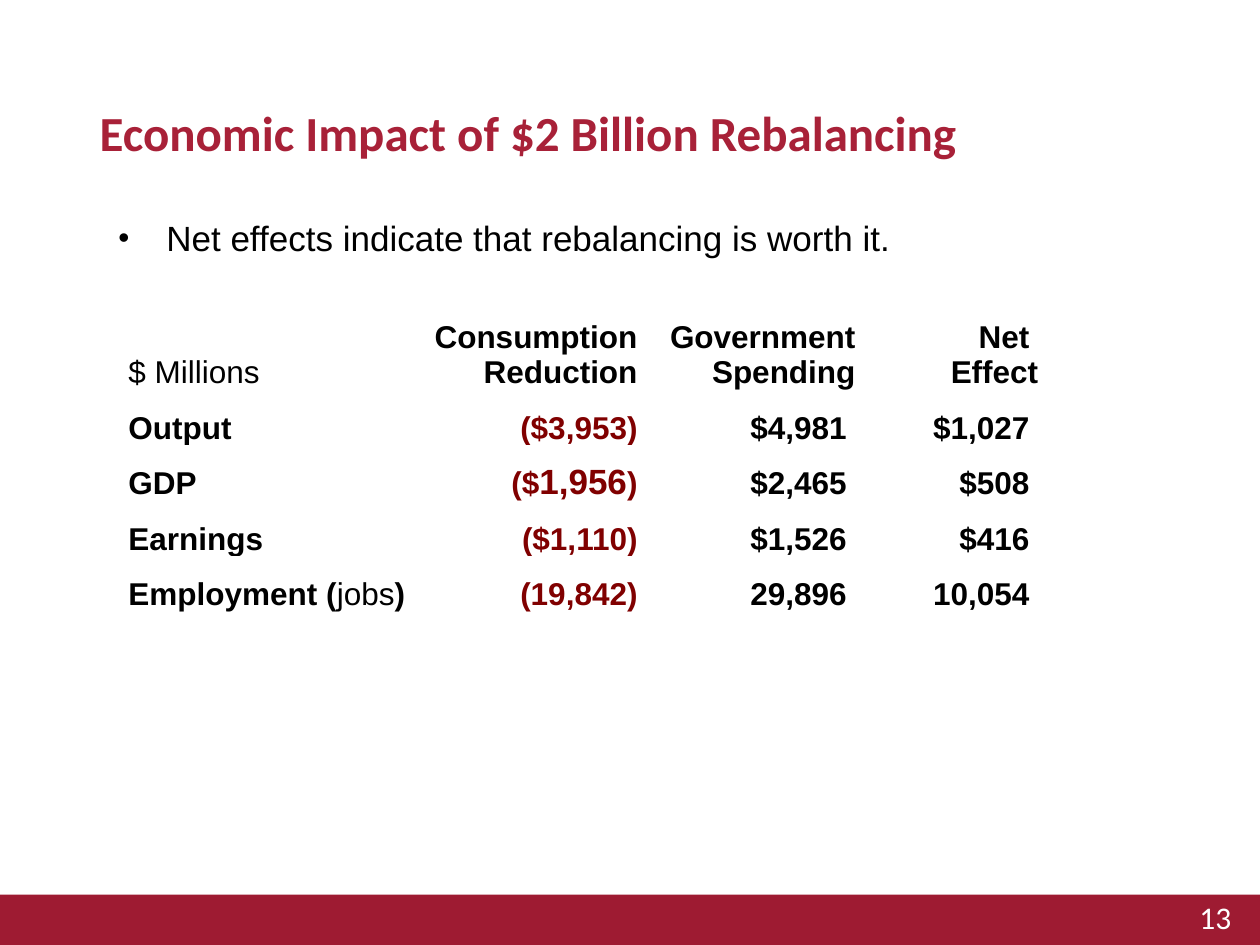
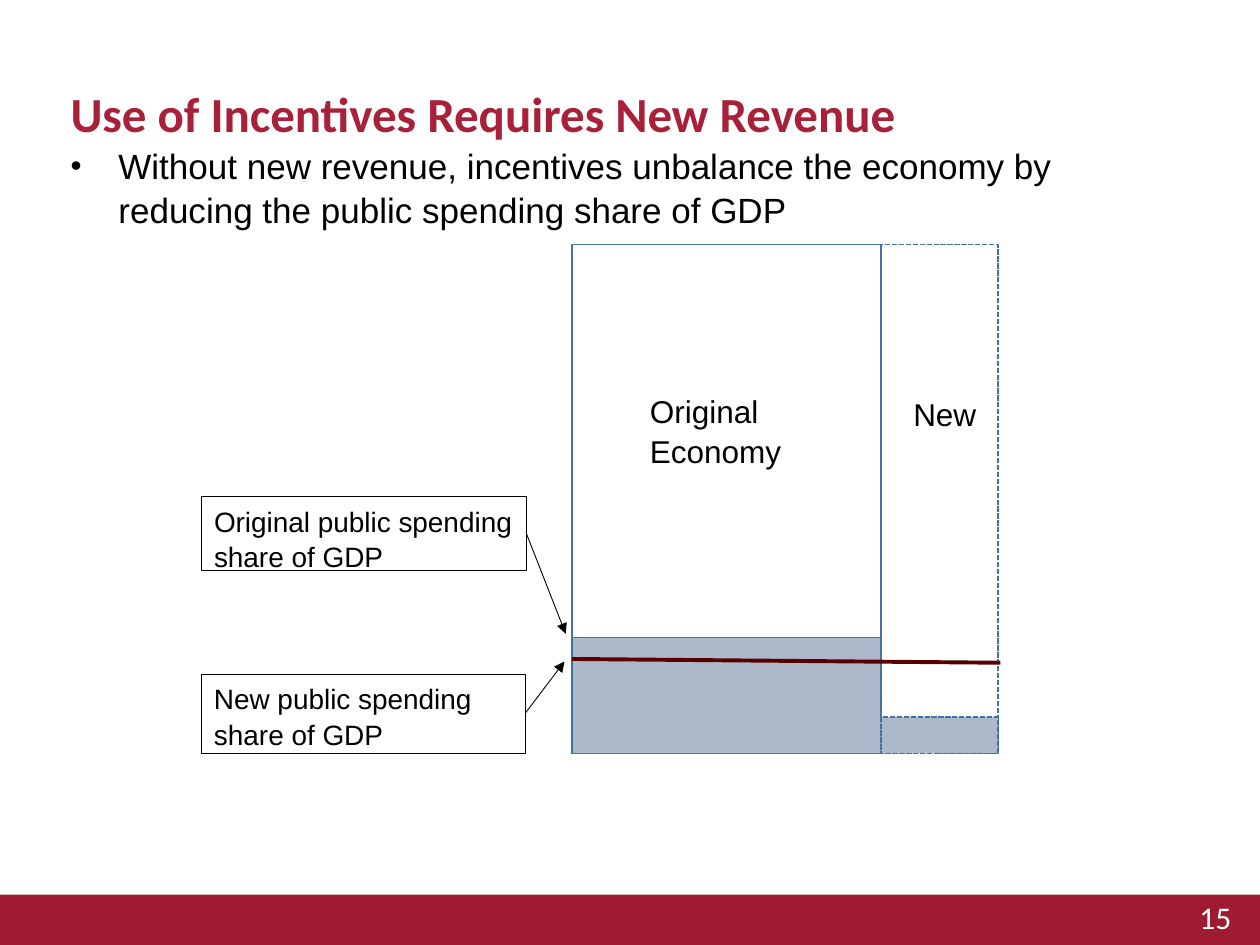
from dataclasses import dataclass

from lxml import etree
from pptx import Presentation
from pptx.dml.color import RGBColor
from pptx.enum.dml import MSO_LINE
from pptx.enum.shapes import MSO_CONNECTOR, MSO_SHAPE
from pptx.enum.text import MSO_ANCHOR, MSO_AUTO_SIZE, PP_ALIGN
from pptx.oxml.ns import qn
from pptx.util import Pt

PX = 9144  # EMU per px: 100 px to the inch
TITLE_AND_CONTENT = 1
RECTANGLE = MSO_SHAPE.RECTANGLE
STRAIGHT = MSO_CONNECTOR.STRAIGHT
DASHED = MSO_LINE.SQUARE_DOT
LEFT, RIGHT = PP_ALIGN.LEFT, PP_ALIGN.RIGHT
TOP, MIDDLE, BOTTOM = MSO_ANCHOR.TOP, MSO_ANCHOR.MIDDLE, MSO_ANCHOR.BOTTOM


@dataclass(frozen=True)
class Theme:
    heading_font: str = "Calibri"
    body_font: str = "Arial"
    title_size: int = 28
    body_size: int = 20
    label_size: int = 18
    callout_size: int = 16
    title: str = "A82138"
    band: str = "9E1B32"
    white: str = "FFFFFF"
    text: str = "000000"
    negative: str = "800000"
    outline: str = "43739E"
    public_share: str = "ADB9CA"
    new_share: str = "580000"


THEME = Theme()

IMPACT_HEADER = ["$ Millions", "Consumption\nReduction", "Government Spending", "Net \nEffect"]
IMPACT_ROWS = [
    ["Output", "($3,953)", "$4,981 ", "$1,027 "],
    ["GDP", ["($", "1,956", ")"], "$2,465 ", "$508 "],
    ["Earnings", "($1,110)", "$1,526 ", "$416 "],
    [["Employment (", "jobs", ")"], "(19,842)", "29,896 ", "10,054 "],
]
IMPACT_WIDTHS = [228, 178, 173, 145]
HEADER_HEIGHT, ROW_HEIGHT = 58, 44


def px(*lengths):
    return [length * PX for length in lengths]


def color(value):
    return RGBColor.from_string(value)


def style_font(font, size, value=THEME.text, name=THEME.body_font, bold=False):
    font.name, font.size, font.bold = name, Pt(size), bold
    font.color.rgb = color(value)


def move(shape, area):
    shape.left, shape.top, shape.width, shape.height = px(*area)


def set_title(page, text, area):
    title = page.shapes.title
    move(title, area)
    frame = title.text_frame
    frame.text = text
    frame.auto_size = MSO_AUTO_SIZE.NONE
    frame.vertical_anchor = MIDDLE
    para = frame.paragraphs[0]
    para.alignment = LEFT
    para.line_spacing = 0.9
    style_font(para.font, THEME.title_size, THEME.title, THEME.heading_font, True)


def set_bullet(page, text, area):
    body = page.placeholders[1]
    move(body, area)
    frame = body.text_frame
    frame.text = text
    frame.auto_size = MSO_AUTO_SIZE.NONE
    para = frame.paragraphs[0]
    properties = para._p.get_or_add_pPr()
    properties.set("marL", str(38 * PX))
    properties.set("indent", str(-38 * PX))
    for tag, name, value in (
        ("a:buSzPct", "val", "90000"),
        ("a:buFont", "typeface", THEME.body_font),
        ("a:buChar", "char", "•"),
    ):
        etree.SubElement(properties, qn(tag)).set(name, value)
    para.space_before = Pt(0)
    para.line_spacing = 1.05
    style_font(para.font, THEME.body_size)


def write_label(box, text, size):
    frame = box.text_frame
    frame.text = text
    frame.word_wrap = True
    frame.vertical_anchor = TOP
    para = frame.paragraphs[0]
    para.alignment = LEFT
    para.line_spacing = 1.05
    style_font(para.font, size)


def add_label(page, text, area):
    write_label(page.shapes.add_textbox(*px(*area)), text, THEME.label_size)


def add_box(page, area, fill=None, line=None, width=1, dash=None):
    box = page.shapes.add_shape(RECTANGLE, *px(*area))
    box.shadow.inherit = False
    if fill:
        box.fill.solid()
        box.fill.fore_color.rgb = color(fill)
    else:
        box.fill.background()
    if line:
        box.line.color.rgb = color(line)
        box.line.width = Pt(width)
        box.line.dash_style = dash
    else:
        box.line.fill.background()
    return box


def add_callout(page, text, area):
    box = add_box(page, area, line=THEME.text, width=0.5)
    write_label(box, text, THEME.callout_size)


def add_line(page, start, end, value, width, arrow=False):
    connector = page.shapes.add_connector(STRAIGHT, *px(*start, *end))
    connector.line.color.rgb = color(value)
    connector.line.width = Pt(width)
    if arrow:
        etree.SubElement(connector.line._get_or_add_ln(), qn("a:tailEnd")).set("type", "triangle")
    etree.SubElement(connector._element.spPr, qn("a:effectLst"))


def add_footer(page, number):
    add_box(page, (0, 710, 1001, 40), fill=THEME.band)
    box = page.shapes.add_textbox(*px(942, 708, 58, 40))
    box.text_frame.text = number
    style_font(box.text_frame.paragraphs[0].font, THEME.label_size, THEME.white, THEME.heading_font)


def fill_cell(cell, content, is_label, value, bold):
    """Write a cell; a list holds runs, of which the middle one stands out."""
    cell.fill.background()
    cell.vertical_anchor = BOTTOM
    cell.margin_left = cell.margin_right = cell.margin_top = PX
    cell.margin_bottom = 0
    frame = cell.text_frame
    if isinstance(content, list):
        for text in content:
            frame.paragraphs[0].add_run().text = text
        middle = frame.paragraphs[0].runs[1].font
        if is_label:
            middle.bold = False
        else:
            middle.size = Pt(THEME.body_size)
    else:
        frame.text = content
    for para in frame.paragraphs:
        para.alignment = LEFT if is_label else RIGHT
        style_font(para.font, THEME.label_size, value, bold=bold)


def add_impact_table(page, left, top):
    rows = [IMPACT_HEADER, *IMPACT_ROWS]
    height = HEADER_HEIGHT + ROW_HEIGHT * len(IMPACT_ROWS)
    area = px(left, top, sum(IMPACT_WIDTHS), height)
    table = page.shapes.add_table(len(rows), len(IMPACT_WIDTHS), *area).table
    table.first_row = table.horz_banding = False
    for column, width in zip(table.columns, IMPACT_WIDTHS):
        column.width = width * PX
    for i, row in enumerate(rows):
        table.rows[i].height = (ROW_HEIGHT if i else HEADER_HEIGHT) * PX
        for j, content in enumerate(row):
            value = THEME.negative if i and j == 1 else THEME.text
            fill_cell(table.cell(i, j), content, j == 0, value, bold=bool(i or j))


def add_economy_diagram(page):
    left, split, right = 454, 699, 792
    top, bottom = 194, 598
    original_top, new_top = 506, 569
    outline, share = THEME.outline, THEME.public_share
    add_box(page, (left, top, split - left, bottom - top), line=outline)
    add_box(page, (left, top, right - left, bottom - top), line=outline, dash=DASHED)
    add_box(page, (left, original_top, split - left, bottom - original_top), share, outline)
    add_box(page, (split, new_top, right - split, bottom - new_top), share, outline, dash=DASHED)
    add_line(page, (left, 523), (794, 526), THEME.new_share, 2.25)
    add_label(page, "New", (715, 307, 73, 38))
    add_label(page, "Original Economy", (506, 305, 142, 80))
    add_callout(page, "Original public spending share of GDP", (160, 394, 258, 59))
    add_callout(page, "New public spending share of GDP", (160, 535, 257, 63))
    add_line(page, (417, 566), (448, 525), THEME.text, 0.5, arrow=True)
    add_line(page, (418, 424), (449, 503), THEME.text, 0.5, arrow=True)


def add_page(deck, number, title, title_area, bullet, bullet_area):
    page = deck.slides.add_slide(deck.slide_layouts[TITLE_AND_CONTENT])
    add_footer(page, number)
    set_title(page, title, title_area)
    set_bullet(page, bullet, bullet_area)
    return page


def main():
    deck = Presentation()
    deck.slide_width, deck.slide_height = px(1000, 750)

    impact = add_page(
        deck, "13",
        "Economic Impact of $2 Billion Rebalancing", (69, 70, 862, 76),
        "Net effects indicate that rebalancing is worth it.", (84, 165, 866, 56),
    )
    add_impact_table(impact, 101, 249)

    incentives = add_page(
        deck, "15",
        "Use of Incentives Requires New Revenue", (46, 51, 945, 83),
        "Without new revenue, incentives unbalance the economy by "
        "reducing the public spending share of GDP", (46, 108, 912, 86),
    )
    add_economy_diagram(incentives)

    deck.save("out.pptx")


if __name__ == "__main__":
    main()
